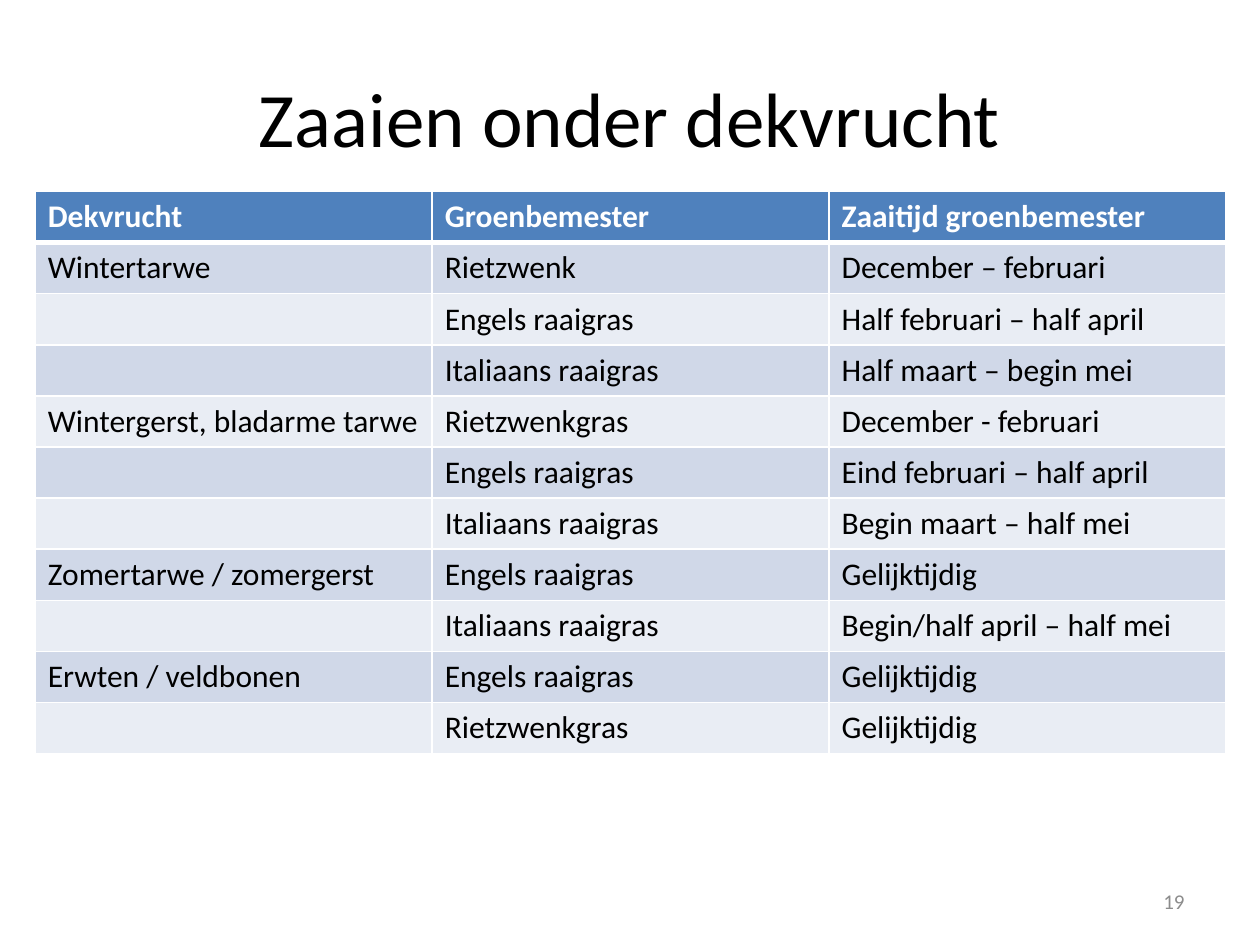
from lxml import etree
from pptx import Presentation
from pptx.dml.color import RGBColor
from pptx.enum.text import MSO_ANCHOR, PP_ALIGN
from pptx.oxml.ns import qn
from pptx.util import Pt

LEFT, CENTER, RIGHT = PP_ALIGN.LEFT, PP_ALIGN.CENTER, PP_ALIGN.RIGHT
MIDDLE = MSO_ANCHOR.MIDDLE

TITLE = "Zaaien onder dekvrucht"
PAGE_NUMBER = "19"
HEADERS = ("Dekvrucht", "Groenbemester", "Zaaitijd groenbemester")
SOWING_TIMES = [
    ("Wintertarwe", [
        ("Rietzwenk", "December – februari"),
        ("Engels raaigras", "Half februari – half april"),
        ("Italiaans raaigras", "Half maart – begin mei"),
    ]),
    ("Wintergerst, bladarme tarwe", [
        ("Rietzwenkgras", "December - februari"),
        ("Engels raaigras", "Eind februari – half april"),
        ("Italiaans raaigras", "Begin maart – half mei"),
    ]),
    ("Zomertarwe / zomergerst", [
        ("Engels raaigras", "Gelijktijdig"),
        ("Italiaans raaigras", "Begin/half april – half mei"),
    ]),
    ("Erwten / veldbonen", [
        ("Engels raaigras", "Gelijktijdig"),
        ("Rietzwenkgras", "Gelijktijdig"),
    ]),
]

WHITE, BLACK, GRAY = "FFFFFF", "000000", "8C8C8C"
HEADER_FILL = "4F81BD"
BAND_FILLS = ("D0D8E8", "E9EDF4")
COLUMN_WIDTH, ROW_HEIGHT = 226.8, 29.2


def color(value):
    return RGBColor.from_string(value)


def write_text(frame, text, size=18, fill=BLACK, bold=False, align=LEFT):
    paragraph = frame.paragraphs[0]
    paragraph.text = text
    paragraph.alignment = align
    font = paragraph.font
    font.name, font.size, font.bold = "Calibri", Pt(size), bold
    font.color.rgb = color(fill)


def set_borders(cell, **widths):
    properties = cell._tc.get_or_add_tcPr()
    for side, width in widths.items():
        line = etree.SubElement(properties, qn(f"a:ln{side}"), w=str(Pt(width)))
        solid = etree.SubElement(line, qn("a:solidFill"))
        etree.SubElement(solid, qn("a:srgbClr"), val=WHITE)


def add_sowing_table(slide):
    rows = [HEADERS]
    for crop, sowings in SOWING_TIMES:
        for index, sowing in enumerate(sowings):
            rows.append(("" if index else crop, *sowing))

    table = slide.shapes.add_table(
        len(rows), len(HEADERS), Pt(20.16), Pt(109.44),
        Pt(COLUMN_WIDTH * len(HEADERS)), Pt(ROW_HEIGHT * len(rows))).table
    for column in table.columns:
        column.width = Pt(COLUMN_WIDTH)
    for row_index, texts in enumerate(rows):
        table.rows[row_index].height = Pt(ROW_HEIGHT)
        is_header = row_index == 0
        fill = HEADER_FILL if is_header else BAND_FILLS[(row_index - 1) % 2]
        for column_index, text in enumerate(texts):
            cell = table.cell(row_index, column_index)
            set_borders(cell, L=1, R=1, T=3 if row_index == 1 else 1,
                        B=3 if is_header else 1)
            cell.fill.solid()
            cell.fill.fore_color.rgb = color(fill)
            write_text(cell.text_frame, text, bold=is_header,
                       fill=WHITE if is_header else BLACK)


def main():
    presentation = Presentation()
    presentation.slide_width, presentation.slide_height = Pt(720), Pt(540)
    slide = presentation.slides.add_slide(presentation.slide_layouts[5])

    title = slide.shapes.title
    title.left, title.top, title.width, title.height = Pt(36), Pt(21.6), Pt(648), Pt(90)
    title.text_frame.vertical_anchor = MIDDLE
    write_text(title.text_frame, TITLE, size=44, align=CENTER)

    add_sowing_table(slide)

    page_number = slide.shapes.add_textbox(Pt(516), Pt(500.5), Pt(168), Pt(28.75))
    page_number.text_frame.word_wrap = True
    page_number.text_frame.vertical_anchor = MIDDLE
    write_text(page_number.text_frame, PAGE_NUMBER, size=12, fill=GRAY, align=RIGHT)

    presentation.save("out.pptx")


if __name__ == "__main__":
    main()
